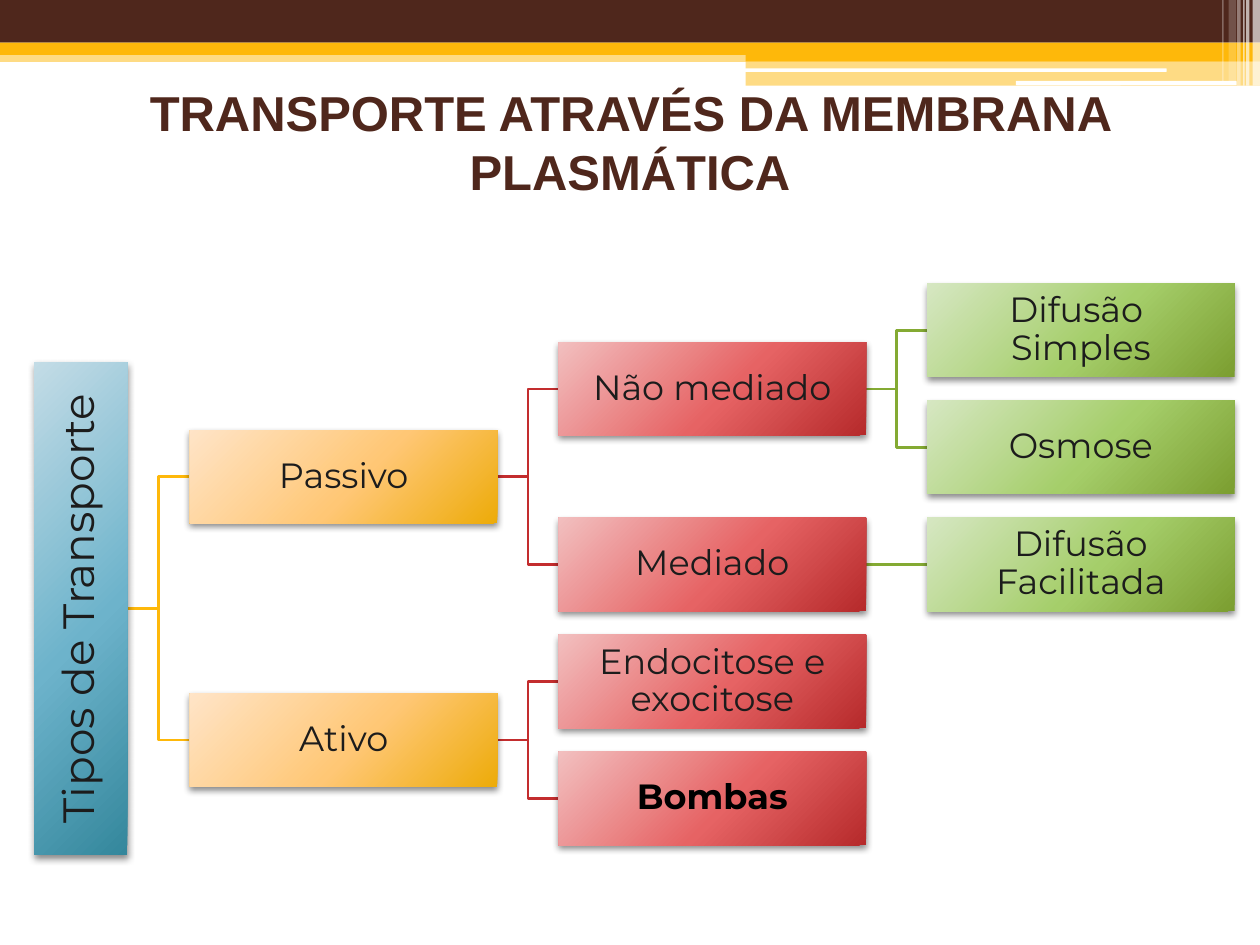
from dataclasses import dataclass, field

from lxml import etree
from pptx import Presentation
from pptx import util as u
from pptx.dml.color import RGBColor
from pptx.enum import shapes, text
from pptx.oxml import ns

BROWN = RGBColor(0x4F, 0x27, 0x1C)
AMBER = RGBColor(0xFE, 0xB8, 0x0A)
RED = RGBColor(0xC3, 0x2D, 0x2E)
GREEN = RGBColor(0x84, 0xAA, 0x33)
WHITE = RGBColor(0xFF, 0xFF, 0xFF)
INK = RGBColor(0x1C, 0x1C, 0x1C)
BLACK = RGBColor(0, 0, 0)

BOX_WIDTH, BOX_HEIGHT = 6.2, 1.88
ROOT_LENGTH, ROOT_LEFT = 9.93, 0.69
FIRST_LEFT, COLUMN_STEP = 3.83, 7.43
FIRST_MIDDLE, ROW_STEP = 6.66, 2.36


@dataclass(frozen=True)
class Bar:
    left: float
    top: float
    width: float
    height: float
    color: RGBColor
    opacity: int = 100
    kind: shapes.MSO_SHAPE = shapes.MSO_SHAPE.RECTANGLE


@dataclass(frozen=True)
class Level:
    gradient: tuple[str, str, str]
    line: RGBColor


@dataclass(frozen=True)
class Node:
    label: str
    row: float = 0
    children: list["Node"] = field(default_factory=list)
    bold: bool = False

    @property
    def center_row(self) -> float:
        if not self.children:
            return self.row
        return sum(child.center_row for child in self.children) / len(self.children)


ROUNDED = shapes.MSO_SHAPE.ROUNDED_RECTANGLE
BARS = [
    Bar(0, 1.02, 25.4, 0.23, AMBER, 50),
    Bar(0, 0, 25.4, 0.86, BROWN),
    Bar(0, 0.86, 25.4, 0.25, AMBER),
    Bar(15.03, 0.99, 10.37, 0.24, AMBER),
    Bar(15.03, 1.23, 10.37, 0.5, AMBER, 50),
    Bar(15.01, 1.38, 8.51, 0.07, WHITE, kind=ROUNDED),
    Bar(20.48, 1.63, 4.45, 0.09, WHITE, kind=ROUNDED),
    Bar(25.25, 0, 0.15, 1.73, WHITE, 65),
    Bar(25.12, 0, 0.07, 1.73, WHITE, 65),
    Bar(25.06, 0, 0.03, 1.73, WHITE, 60),
    Bar(24.94, 0, 0.07, 1.73, WHITE, 40),
    Bar(24.77, 0, 0.15, 1.63, WHITE, 20),
    Bar(24.64, 0, 0.03, 1.63, WHITE, 30),
]

LEVELS = [
    Level(("C3DCE6", "6DB3CB", "34879C"), AMBER),
    Level(("FFE4C7", "FFC775", "EDAB09"), RED),
    Level(("F2BFBF", "E66364", "B62A2B"), GREEN),
    Level(("D6E7C2", "A5CE6A", "7B9E30"), GREEN),
]

TREE = Node("Tipos de Transporte", children=[
    Node("Passivo", children=[
        Node("Não mediado", children=[
            Node("Difusão \nSimples", 0),
            Node("Osmose", 1),
        ]),
        Node("Mediado", children=[Node("Difusão Facilitada", 2)]),
    ]),
    Node("Ativo", children=[
        Node("Endocitose e exocitose", 3),
        Node("Bombas", 4, bold=True),
    ]),
])


def write(shape, label: str, font: str, size: float, color: RGBColor,
          bold: bool, spacing: float, inset: float) -> None:
    frame = shape.text_frame
    frame.text = label
    frame.word_wrap = True
    frame.vertical_anchor = text.MSO_ANCHOR.MIDDLE
    frame.margin_left = frame.margin_right = u.Cm(inset)
    frame.margin_top = frame.margin_bottom = u.Cm(inset)
    for para in frame.paragraphs:
        para.alignment = text.PP_ALIGN.CENTER
        para.line_spacing = spacing
        for span in para.runs:
            span.font.name = font
            span.font.size = u.Pt(size)
            span.font.bold = bold
            span.font.color.rgb = color


def draw_bar(page, bar: Bar) -> None:
    shape = page.shapes.add_shape(bar.kind, u.Cm(bar.left), u.Cm(bar.top),
                                  u.Cm(bar.width), u.Cm(bar.height))
    shape.shadow.inherit = False
    shape.line.fill.background()
    shape.fill.solid()
    shape.fill.fore_color.rgb = bar.color
    if bar.opacity < 100:
        color = shape.fill._xPr.find(".//" + ns.qn("a:srgbClr"))
        etree.SubElement(color, ns.qn("a:alpha"), val=str(bar.opacity * 1000))


def add_gradient_and_shadow(shape, colors: tuple[str, str, str]) -> None:
    stops = "".join(
        f'<a:gs pos="{position}"><a:srgbClr val="{color}"/></a:gs>'
        for position, color in zip((0, 55000, 100000), colors))
    gradient = etree.fromstring(
        f'<a:gradFill {ns.nsdecls("a")} rotWithShape="1"><a:gsLst>{stops}</a:gsLst>'
        '<a:path path="circle"><a:fillToRect l="-40000" t="-90000" r="140000" b="190000"/>'
        '</a:path></a:gradFill>')
    shadow = etree.fromstring(
        f'<a:outerShdw {ns.nsdecls("a")} blurRad="50800" dist="25400" dir="5400000" '
        'rotWithShape="0"><a:srgbClr val="000000"><a:alpha val="45000"/></a:srgbClr>'
        '</a:outerShdw>')
    shape.shadow.inherit = False
    properties = shape._element.spPr
    properties.find(ns.qn("a:prstGeom")).addnext(gradient)
    properties.find(ns.qn("a:effectLst")).append(shadow)


def middle_of(node: Node) -> float:
    return FIRST_MIDDLE + node.center_row * ROW_STEP


def left_of(depth: int) -> float:
    return FIRST_LEFT + (depth - 1) * COLUMN_STEP


def draw_box(page, node: Node, depth: int) -> None:
    root = depth == 0
    width = ROOT_LENGTH if root else BOX_WIDTH
    left = ROOT_LEFT + (BOX_HEIGHT - width) / 2 if root else left_of(depth)
    box = page.shapes.add_shape(
        shapes.MSO_SHAPE.RECTANGLE, u.Cm(left), u.Cm(middle_of(node) - BOX_HEIGHT / 2),
        u.Cm(width), u.Cm(BOX_HEIGHT))
    box.rotation = 270 if root else 0
    box.line.fill.background()
    add_gradient_and_shadow(box, LEVELS[depth].gradient)
    write(box, node.label, "Montserrat", 25 if root else 20,
          BLACK if node.bold else INK, node.bold, 0.9, 0.04)


def draw_link(page, parent: Node, child: Node, depth: int) -> None:
    start = left_of(depth) + BOX_WIDTH if depth else ROOT_LEFT + BOX_HEIGHT
    level = parent.center_row == child.center_row
    kind = shapes.MSO_CONNECTOR.STRAIGHT if level else shapes.MSO_CONNECTOR.ELBOW
    link = page.shapes.add_connector(
        kind, u.Cm(start), u.Cm(middle_of(parent)),
        u.Cm(left_of(depth + 1)), u.Cm(middle_of(child)))
    link.line.color.rgb = LEVELS[depth].line
    link.line.width = u.Pt(1.5)
    etree.SubElement(link._element.spPr, ns.qn("a:effectLst"))


def draw_tree(page, node: Node, depth: int = 0) -> None:
    for child in node.children:
        draw_link(page, node, child, depth)
        draw_tree(page, child, depth + 1)
    draw_box(page, node, depth)


def main() -> None:
    deck = Presentation()
    deck.slide_width, deck.slide_height = u.Cm(25.4), u.Cm(19.05)
    page = deck.slides.add_slide(deck.slide_layouts[6])
    for bar in BARS:
        draw_bar(page, bar)
    title = page.shapes.add_textbox(u.Cm(0), u.Cm(1.78), u.Cm(25.4), u.Cm(2.13))
    write(title, "TRANSPORTE ATRAVÉS DA MEMBRANA PLASMÁTICA", "Arial", 28,
          BROWN, True, 1, 0.13)
    draw_tree(page, TREE)
    deck.save("out.pptx")


if __name__ == "__main__":
    main()
